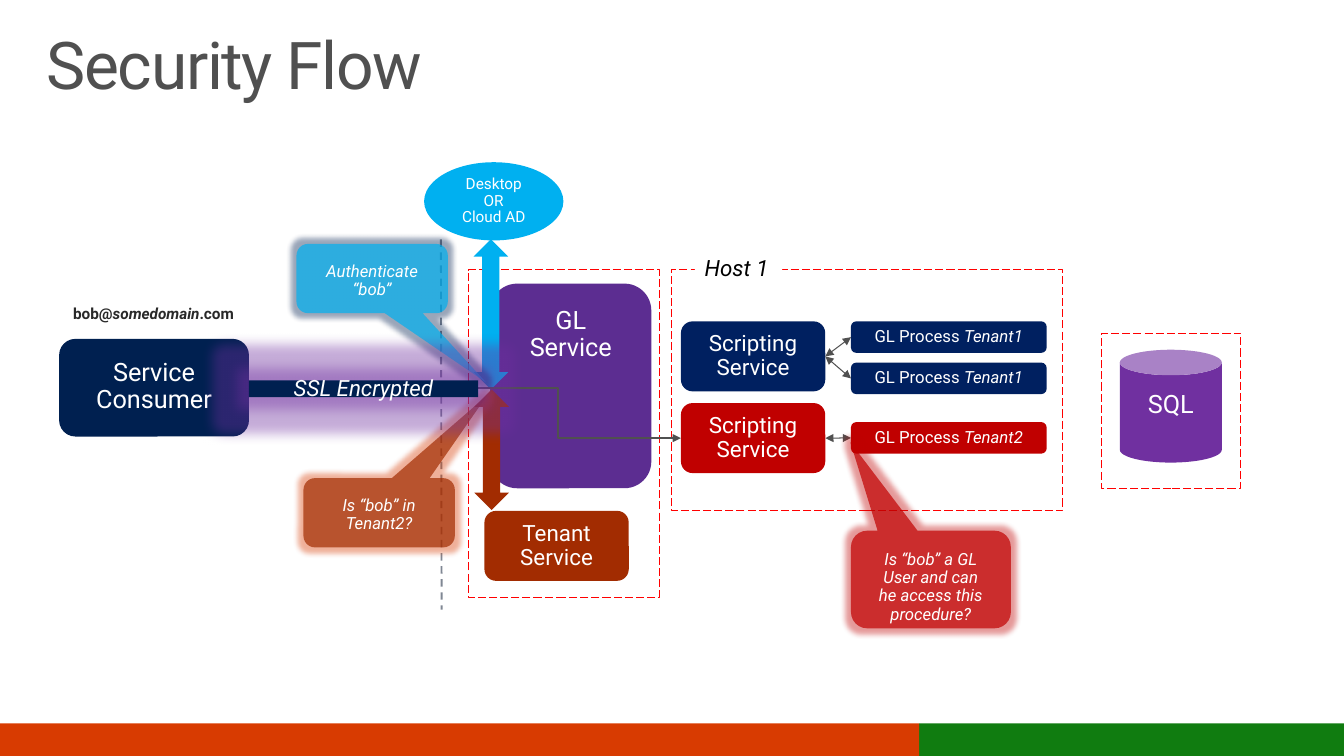
"""Builds the Security Flow slide."""
from dataclasses import dataclass

from lxml import etree
from pptx import Presentation
from pptx import util as u
from pptx.dml.color import RGBColor
from pptx.enum import dml, shapes, text
from pptx.oxml.ns import qn

KIND = shapes.MSO_SHAPE


@dataclass(frozen=True)
class Theme:
    """Colours, font and type sizes of the slide."""
    font: str = "Roboto"
    white: str = "FFFFFF"
    black: str = "000000"
    ink: str = "292929"
    grey: str = "505050"
    midnight: str = "001028"
    navy: str = "002050"
    blue: str = "002060"
    sky: str = "00B0F0"
    violet: str = "5C2D91"
    purple: str = "7030A0"
    red: str = "C00000"
    alert: str = "FF0000"
    rust: str = "A22C01"
    orange: str = "D83B01"
    green: str = "107C10"
    title: float = 48
    large: float = 18.4
    medium: float = 16.3
    small: float = 12.2
    tiny: float = 11.2


THEME = Theme()


def lengths(values):
    """Turn centimetre numbers into lengths."""
    return [u.Cm(value) for value in values]


def add_child(parent, tag, **attributes):
    """Append a drawing element with attributes."""
    element = etree.SubElement(parent, qn(tag))
    for name, value in attributes.items():
        element.set(name, str(value))
    return element


def set_alpha(properties, percent):
    """Make the solid fill inside the given properties translucent."""
    color = next(properties.iter(qn("a:srgbClr")))
    add_child(color, "a:alpha", val=percent * 1000)


def write(shape, content, size, color=THEME.white, align=text.PP_ALIGN.CENTER,
          anchor=text.MSO_ANCHOR.TOP, insets=(0.51, 0.41), bold=False,
          spacing=None, wrap=True):
    """Write text into a shape; asterisks enclose italic parts."""
    frame = shape.text_frame
    frame.word_wrap = wrap
    frame.vertical_anchor = anchor
    frame.margin_left = frame.margin_right = u.Cm(insets[0])
    frame.margin_top = frame.margin_bottom = u.Cm(insets[1])
    for index, line in enumerate(content.split("\n")):
        paragraph = frame.add_paragraph() if index else frame.paragraphs[0]
        paragraph.alignment = align
        paragraph.line_spacing = 0.9
        for position, part in enumerate(line.split("*")):
            if not part:
                continue
            run = paragraph.add_run()
            run.text = part
            run.font.name = THEME.font
            run.font.size = u.Pt(size)
            run.font.bold = bold
            run.font.italic = position % 2 == 1
            run.font.color.rgb = RGBColor.from_string(color)
            if spacing is not None:
                run.font._element.set("spc", str(spacing))


def add_block(slide, kind, box, fill, content="", size=THEME.medium, **style):
    """Add a filled shape without outline, with optional text."""
    shape = slide.shapes.add_shape(kind, *lengths(box))
    shape.shadow.inherit = False
    shape.fill.solid()
    shape.fill.fore_color.rgb = RGBColor.from_string(fill)
    shape.line.fill.background()
    if content:
        write(shape, content, size, **style)
    return shape


def add_label(slide, box, content, size, **style):
    """Add a text box aligned to the left."""
    label = slide.shapes.add_textbox(*lengths(box))
    write(label, content, size, align=text.PP_ALIGN.LEFT, **style)


def add_zone(slide, box):
    """Add a dashed boundary."""
    zone = slide.shapes.add_shape(KIND.RECTANGLE, *lengths(box))
    zone.shadow.inherit = False
    zone.fill.background()
    zone.line.color.rgb = RGBColor.from_string(THEME.alert)
    zone.line.width = u.Pt(0.75)
    zone.line.dash_style = dml.MSO_LINE.LONG_DASH


def add_glow(shape, color, radius):
    """Surround a shape with a soft coloured glow."""
    effects = shape._element.spPr.find(qn("a:effectLst"))
    glow = add_child(effects, "a:glow", rad=int(u.Pt(radius)))
    add_child(glow, "a:srgbClr", val=color)
    set_alpha(glow, 40)


def add_callout(slide, box, tip, fill, glow, content):
    """Add a translucent callout whose pointer ends at the tip."""
    callout = add_block(slide, KIND.ROUNDED_RECTANGULAR_CALLOUT, box, fill,
                        f"*{content}*", THEME.small)
    callout.adjustments[0], callout.adjustments[1] = tip
    set_alpha(callout._element.spPr, 70)
    add_glow(callout, glow, 8)


def add_line(slide, ends, color, width, kind=shapes.MSO_CONNECTOR.STRAIGHT):
    """Add a plain connector."""
    line = slide.shapes.add_connector(kind, *lengths(ends))
    line.line.color.rgb = RGBColor.from_string(color)
    line.line.width = u.Pt(width)
    add_child(line._element.spPr, "a:effectLst")
    return line


def add_link(slide, source, target, width=0.75, bend=None):
    """Join two shapes, with one arrowhead when bent and two when straight."""
    kind = shapes.MSO_CONNECTOR.ELBOW if bend else shapes.MSO_CONNECTOR.STRAIGHT
    link = add_line(slide, (0, 0, 1, 1), THEME.grey, width, kind)
    link.begin_connect(source, 3)
    link.end_connect(target, 1)
    outline = link.line._get_or_add_ln()
    if bend:
        guides = link._element.spPr.prstGeom.get_or_add_avLst()
        add_child(guides, "a:gd", name="adj1", fmla=f"val {round(bend * 100000)}")
    else:
        add_child(outline, "a:headEnd", type="triangle")
    add_child(outline, "a:tailEnd", type="triangle")


def add_host(slide):
    """Add the host with its services and processes."""
    middle = text.MSO_ANCHOR.MIDDLE
    add_zone(slide, (17.25, 6.93, 10.06, 6.2))
    add_block(slide, KIND.RECTANGLE, (17.86, 6.6, 2.24, 0.64), THEME.white,
              "*Host 1*", THEME.medium, color=THEME.black,
              align=text.PP_ALIGN.LEFT, insets=(0.25, 0))
    hosted = ((8.26, THEME.blue, ((8.26, 1), (9.32, 1))),
              (10.36, THEME.red, ((10.85, 2),)))
    for top, color, processes in hosted:
        service = add_block(slide, KIND.ROUNDED_RECTANGLE, (17.5, top, 3.71, 1.8),
                            color, "Scripting Service", anchor=middle)
        for process_top, tenant in processes:
            process = add_block(slide, KIND.ROUNDED_RECTANGLE,
                                (21.87, process_top, 5.03, 0.81), color,
                                f"GL Process *Tenant{tenant}*", THEME.small,
                                anchor=middle)
            add_link(slide, service, process)
    return service


def add_callouts(slide):
    """Add the three security questions."""
    for callout in (
        ((7.62, 6.27, 3.89, 1.78), (0.752, 1.499), THEME.sky, THEME.navy,
         "Authenticate “bob”"),
        ((7.8, 12.29, 3.89, 1.78), (0.714, -1.697), THEME.rust, THEME.orange,
         "Is “bob” in Tenant2?"),
        ((21.87, 13.64, 4.11, 2.51), (-0.504, -1.406), THEME.red, THEME.red,
         "Is “bob” a GL User and can he access this procedure?"),
    ):
        add_callout(slide, *callout)


def main():
    """Build and save the slide."""
    presentation = Presentation()
    presentation.slide_width, presentation.slide_height = lengths((34.54, 19.43))
    slide = presentation.slides.add_slide(presentation.slide_layouts[6])
    middle = text.MSO_ANCHOR.MIDDLE

    add_block(slide, KIND.RECTANGLE, (23.62, 18.59, 10.92, 0.84), THEME.green)
    add_block(slide, KIND.RECTANGLE, (0, 18.59, 23.62, 0.84), THEME.orange)
    add_label(slide, (0.79, 0.58, 10.9, 2.08), "Security Flow", THEME.title,
              color=THEME.grey, insets=(0.41, 0.25), spacing=-100, wrap=False)
    border = add_line(slide, (11.33, 6.15, 11.35, 15.67), THEME.midnight, 1.35)
    border.line.dash_style = dml.MSO_LINE.DASH
    set_alpha(border._element.spPr, 50)

    add_block(slide, KIND.ROUNDED_RECTANGLE, (12.6, 7.29, 4.14, 5.26),
              THEME.violet, "GL Service", THEME.large)
    add_zone(slide, (12.04, 6.93, 4.9, 8.43))
    tenant_host = add_host(slide)
    add_block(slide, KIND.CAN, (28.78, 8.99, 2.62, 2.9), THEME.purple,
              "SQL", THEME.large)
    add_zone(slide, (28.32, 8.56, 3.56, 3.99))
    add_block(slide, KIND.ROUNDED_RECTANGLE, (12.45, 13.13, 3.71, 1.8),
              THEME.rust, "Tenant Service", anchor=middle)
    consumer = add_block(slide, KIND.ROUNDED_RECTANGLE, (1.52, 8.71, 4.88, 2.51),
                         THEME.navy, "Service Consumer", THEME.large)
    add_label(slide, (1.37, 7.65, 7.87, 1.3), "bob@*somedomain*.com",
              THEME.tiny, color=THEME.ink, bold=True)
    add_block(slide, KIND.OVAL, (10.9, 4.17, 3.58, 2.01), THEME.sky,
              "Desktop\nOR\nCloud AD", THEME.tiny, anchor=middle, insets=(0, 0.41))
    add_block(slide, KIND.UP_DOWN_ARROW, (12.17, 6.15, 0.89, 3.86), THEME.sky)
    add_block(slide, KIND.UP_DOWN_ARROW, (12.19, 10.01, 0.89, 3.1), THEME.rust)
    add_link(slide, consumer, tenant_host, width=1.75, bend=0.716)
    add_callouts(slide)
    channel = add_block(slide, KIND.RECTANGLE, (6.4, 9.78, 5.89, 0.43),
                        THEME.navy, "*SSL Encrypted*", anchor=middle)
    add_glow(channel, THEME.purple, 18)
    presentation.save("out.pptx")


if __name__ == "__main__":
    main()
